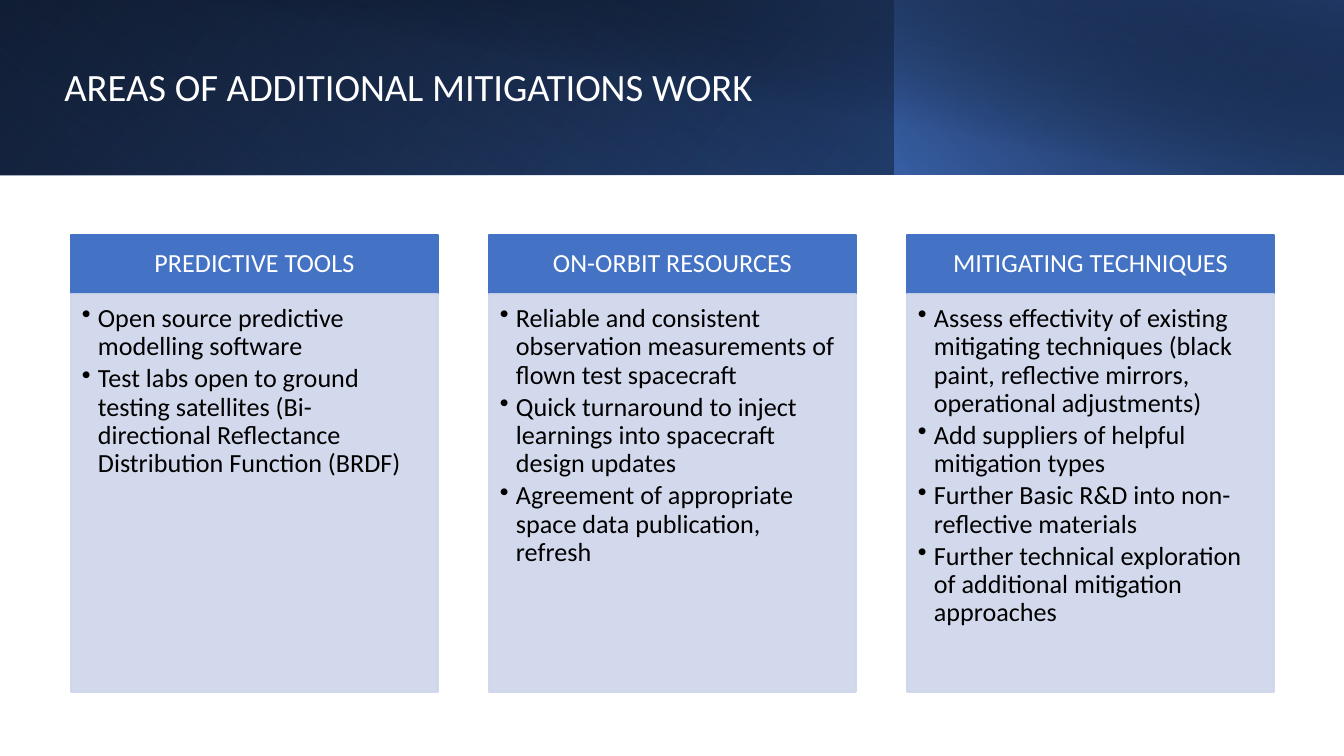
from dataclasses import dataclass

from lxml import etree
from pptx import Presentation
from pptx.dml.color import RGBColor
from pptx.enum.shapes import MSO_SHAPE
from pptx.enum.text import MSO_ANCHOR, MSO_AUTO_SIZE, PP_ALIGN
from pptx.oxml.ns import qn
from pptx.util import Emu, Pt

RECTANGLE = MSO_SHAPE.RECTANGLE
TOP, MIDDLE = MSO_ANCHOR.TOP, MSO_ANCHOR.MIDDLE
LEFT, CENTER = PP_ALIGN.LEFT, PP_ALIGN.CENTER
NO_AUTOFIT = MSO_AUTO_SIZE.NONE
TITLE_ONLY = 5


@dataclass(frozen=True)
class Theme:
    font: str = "Calibri"
    title_size: float = 20.7
    text_size: float = 14
    white: str = "FFFFFF"
    black: str = "000000"
    accent: str = "4472C4"
    accent_dark: str = "2F5597"
    navy: str = "203864"
    panel: str = "CFD5EA"
    panel_opacity: int = 90
    line_spacing: float = 0.9
    bullet_gap: float = 2.1


THEME = Theme()

TITLE = "AREAS OF ADDITIONAL MITIGATIONS WORK"

# Box, gradient angle, rotation, mirrored, stops of (position, colour, opacity)
BANDS = [
    ((0, 0, 1344, 175), 140, 0, True,
     [(0, THEME.black, 100), (100, THEME.accent_dark, 100)]),
    ((0, 0, 895, 175), 230, 180, True,
     [(20, THEME.accent, 0), (100, THEME.navy, 55)]),
    ((895, 0, 449, 175), 220, 0, True,
     [(0, THEME.accent, 66), (100, THEME.black, 30)]),
    ((51, 0, 1293, 176), 280, 0, False,
     [(50, THEME.black, 0), (99, THEME.navy, 52)]),
]

COLUMNS = [
    ("PREDICTIVE TOOLS", [
        "Open source predictive modelling software",
        "Test labs open to ground testing satellites (Bi-directional "
        "Reflectance Distribution Function (BRDF)",
    ]),
    ("ON-ORBIT RESOURCES", [
        "Reliable and consistent observation measurements of flown test spacecraft",
        "Quick turnaround to inject learnings into spacecraft design updates",
        "Agreement of appropriate space data publication, refresh",
    ]),
    ("MITIGATING TECHNIQUES", [
        "Assess effectivity of existing mitigating techniques (black paint, "
        "reflective mirrors, operational adjustments)",
        "Add suppliers of helpful mitigation types",
        "Further Basic R&D into non-reflective materials",
        "Further technical exploration of additional mitigation approaches",
    ]),
]
COLUMN_LEFT, COLUMN_PITCH, COLUMN_WIDTH = 71, 418, 367
HEADER_TOP, HEADER_HEIGHT, BODY_HEIGHT = 235, 59, 398
HEADER_INSETS = (15, 8, 15, 8)
BODY_INSETS = (11, 11, 15, 16)
BULLET_INDENT = 16


def px(length):
    return Emu(round(length * 914400 / 134.4))


def rgb(colour):
    return RGBColor.from_string(colour)


def set_opacity(shape, values):
    """Give each colour of the shape's fill and line its opacity in percent."""
    colours = list(shape._element.spPr.iter(qn("a:srgbClr")))
    for colour, value in zip(colours, values):
        etree.SubElement(colour, qn("a:alpha")).set("val", str(value * 1000))


def add_box(slide, bounds):
    box = slide.shapes.add_shape(RECTANGLE, *map(px, bounds))
    box.shadow.inherit = False
    return box


def add_band(slide, bounds, angle, rotation, mirrored, stops):
    band = add_box(slide, bounds)
    band.line.fill.background()
    band.rotation = rotation
    if mirrored:
        band._element.spPr.xfrm.set("flipH", "1")
    band.fill.gradient()
    band.fill.gradient_angle = 360 - angle
    for stop, (position, colour, _) in zip(band.fill.gradient_stops, stops):
        stop.position = position / 100
        stop.color.rgb = rgb(colour)
    set_opacity(band, [opacity for _, _, opacity in stops])


def add_panel(slide, bounds, colour, insets, anchor):
    panel = add_box(slide, bounds)
    panel.fill.solid()
    panel.fill.fore_color.rgb = rgb(colour)
    panel.line.color.rgb = rgb(colour)
    panel.line.width = Pt(1)
    frame = panel.text_frame
    frame.word_wrap = True
    frame.vertical_anchor = anchor
    (frame.margin_left, frame.margin_top,
     frame.margin_right, frame.margin_bottom) = map(px, insets)
    return panel


def write(para, text, size, colour, alignment):
    para.alignment = alignment
    para.line_spacing = THEME.line_spacing
    span = para.add_run()
    span.text = text
    span.font.name = THEME.font
    span.font.size = Pt(size)
    span.font.color.rgb = rgb(colour)


def add_bullet(para):
    para.level = 1
    para.space_after = Pt(THEME.bullet_gap)
    properties = para._p.get_or_add_pPr()
    properties.set("marL", str(px(BULLET_INDENT)))
    properties.set("indent", str(-px(BULLET_INDENT)))
    etree.SubElement(properties, qn("a:buChar")).set("char", "•")


def place_title(slide):
    title = slide.shapes.title
    title.left, title.top, title.width, title.height = map(px, (51, 32, 1243, 114))
    frame = title.text_frame
    frame.word_wrap = True
    frame.auto_size = NO_AUTOFIT
    frame.vertical_anchor = MIDDLE
    write(frame.paragraphs[0], TITLE, THEME.title_size, THEME.white, LEFT)
    # Bring the title in front of the bands
    slide.shapes._spTree.append(title._element)


def add_column(slide, left, heading, points):
    header = add_panel(slide, (left, HEADER_TOP, COLUMN_WIDTH, HEADER_HEIGHT),
                       THEME.accent, HEADER_INSETS, MIDDLE)
    write(header.text_frame.paragraphs[0], heading,
          THEME.text_size, THEME.white, CENTER)

    body = add_panel(slide, (left, HEADER_TOP + HEADER_HEIGHT, COLUMN_WIDTH, BODY_HEIGHT),
                     THEME.panel, BODY_INSETS, TOP)
    set_opacity(body, [THEME.panel_opacity] * 2)
    frame = body.text_frame
    for index, point in enumerate(points):
        para = frame.add_paragraph() if index else frame.paragraphs[0]
        write(para, point, THEME.text_size, THEME.black, LEFT)
        add_bullet(para)


def main():
    deck = Presentation()
    deck.slide_width, deck.slide_height = px(1344), px(756)
    slide = deck.slides.add_slide(deck.slide_layouts[TITLE_ONLY])

    # Header bands and title
    for band in BANDS:
        add_band(slide, *band)
    place_title(slide)

    # Three columns of work areas
    for index, (heading, points) in enumerate(COLUMNS):
        add_column(slide, COLUMN_LEFT + index * COLUMN_PITCH, heading, points)

    deck.save("out.pptx")


if __name__ == "__main__":
    main()
